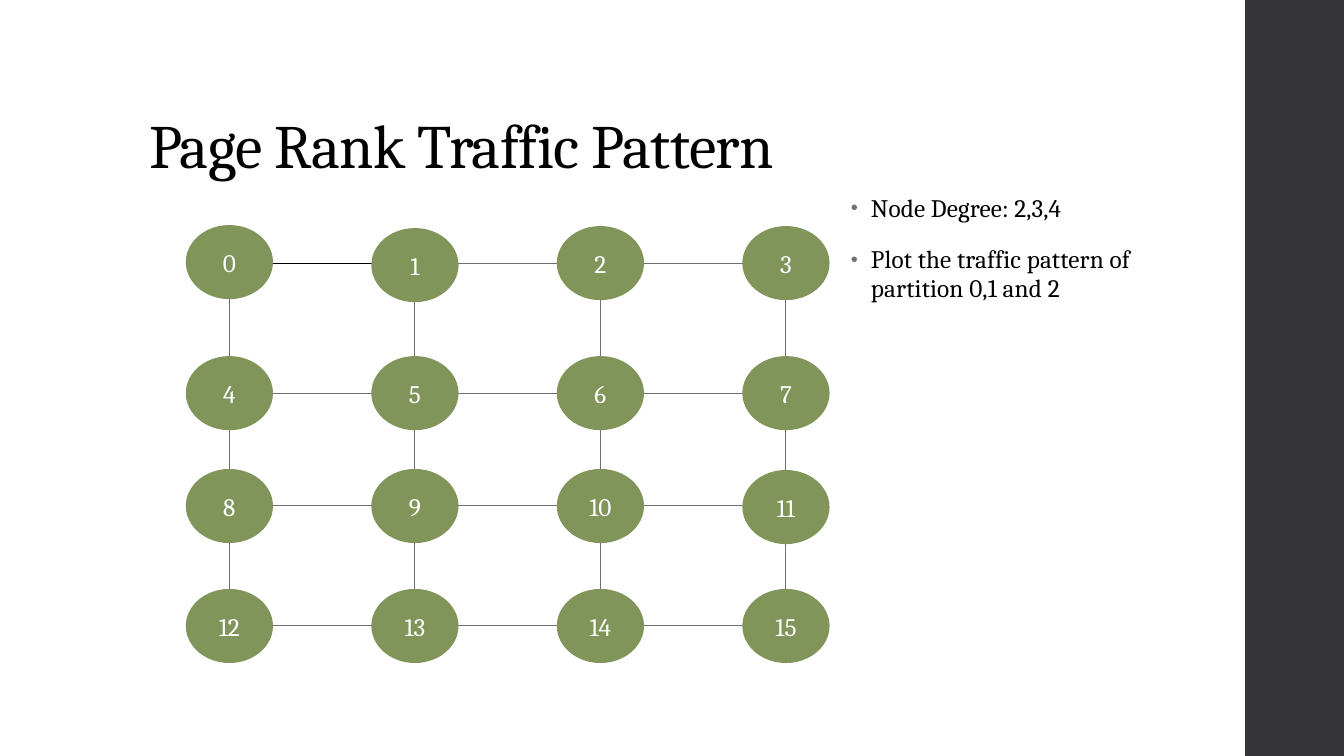
from lxml import etree
from pptx import Presentation
from pptx.dml.color import RGBColor
from pptx.enum.shapes import MSO_CONNECTOR, MSO_SHAPE
from pptx.enum.text import MSO_ANCHOR, PP_ALIGN
from pptx.oxml.ns import qn
from pptx.util import Inches, Pt

FONT = "Cambria"
BLACK, WHITE, GREEN, GRAY, CHARCOAL = "000000", "FFFFFF", "81955B", "6F6F74", "353537"

NODE_WIDTH, NODE_HEIGHT = 0.85, 0.72
COLUMN_LEFTS = [1.85 + 1.84 * column for column in range(4)]
ROW_TOPS = [2.25, 3.54, 4.66, 5.85]
NODE_NUDGES = {0: -0.01, 1: 0.02, 11: 0.01}


def color(hex_code):
    return RGBColor.from_string(hex_code)


def style_runs(paragraph, size, hex_code, tracking=0):
    """Format all runs; tracking is in hundredths of a point."""
    for run in paragraph.runs:
        run.font.name = FONT
        run.font.size = Pt(size)
        run.font.color.rgb = color(hex_code)
        if tracking:
            run.font._element.set("spc", str(tracking))


def add_shape(slide, kind, left, top, width, height, fill):
    shape = slide.shapes.add_shape(
        kind, Inches(left), Inches(top), Inches(width), Inches(height))
    shape.shadow.inherit = False
    shape.fill.solid()
    shape.fill.fore_color.rgb = color(fill)
    shape.line.color.rgb = color(fill)
    shape.line.width = Pt(1.1)
    return shape


def add_side_band(slide):
    band = add_shape(slide, MSO_SHAPE.RECTANGLE, 12.35, 0, 1, 7.5, CHARCOAL)
    band.line.fill.background()


def add_text_frame(slide, left, top, width, height, text):
    frame = slide.shapes.add_textbox(
        Inches(left), Inches(top), Inches(width), Inches(height)).text_frame
    frame.word_wrap = True
    frame.text = text
    return frame


def add_title(slide, text):
    frame = add_text_frame(slide, 1.38, 0.4, 10.6, 1.45, text)
    frame.vertical_anchor = MSO_ANCHOR.BOTTOM
    frame.paragraphs[0].line_spacing = 0.9
    style_runs(frame.paragraphs[0], 44, BLACK, -50)


def add_bullet(paragraph):
    properties = paragraph._p.get_or_add_pPr()
    properties.set("marL", str(Inches(0.2)))
    properties.set("indent", str(Inches(-0.2)))
    bullet_color = etree.SubElement(properties, qn("a:buClr"))
    etree.SubElement(bullet_color, qn("a:srgbClr"), val=GRAY)
    etree.SubElement(properties, qn("a:buSzPct"), val="80000")
    etree.SubElement(properties, qn("a:buFont"), typeface="Arial")
    etree.SubElement(properties, qn("a:buChar"), char="•")


def add_notes_list(slide, items):
    frame = add_text_frame(slide, 8.34, 1.88, 3.52, 4.76, "\n".join(items))
    for paragraph in frame.paragraphs:
        paragraph.line_spacing = 0.95
        paragraph.space_before = Pt(14)
        paragraph.space_after = Pt(2)
        add_bullet(paragraph)
        style_runs(paragraph, 18, BLACK, 10)


def add_node(slide, number):
    row, column = divmod(number, len(COLUMN_LEFTS))
    top = ROW_TOPS[row] + NODE_NUDGES.get(number, 0)
    node = add_shape(slide, MSO_SHAPE.OVAL, COLUMN_LEFTS[column], top,
                     NODE_WIDTH, NODE_HEIGHT, GREEN)
    frame = node.text_frame
    frame.text = str(number)
    frame.vertical_anchor = MSO_ANCHOR.MIDDLE
    frame.paragraphs[0].alignment = PP_ALIGN.CENTER
    style_runs(frame.paragraphs[0], 18, WHITE)


def add_edge(slide, x1, y1, x2, y2, hex_code=GRAY):
    edge = slide.shapes.add_connector(
        MSO_CONNECTOR.STRAIGHT, Inches(x1), Inches(y1), Inches(x2), Inches(y2))
    edge.line.color.rgb = color(hex_code)
    edge.line.width = Pt(0.75)
    etree.SubElement(edge._element.spPr, qn("a:effectLst"))


def add_mesh(slide):
    """Link each node to its right and lower neighbour, then lay the nodes on top."""
    for row, top in enumerate(ROW_TOPS):
        middle = top + NODE_HEIGHT / 2
        for column, (left, right) in enumerate(zip(COLUMN_LEFTS, COLUMN_LEFTS[1:])):
            hex_code = BLACK if row == column == 0 else GRAY
            add_edge(slide, left + NODE_WIDTH, middle, right, middle, hex_code)
    for left in COLUMN_LEFTS:
        center = left + NODE_WIDTH / 2
        for upper, lower in zip(ROW_TOPS, ROW_TOPS[1:]):
            add_edge(slide, center, upper + NODE_HEIGHT, center, lower)
    for number in range(len(ROW_TOPS) * len(COLUMN_LEFTS)):
        add_node(slide, number)


def main():
    deck = Presentation()
    deck.slide_width, deck.slide_height = Inches(13.33), Inches(7.5)
    slide = deck.slides.add_slide(deck.slide_layouts[6])
    add_side_band(slide)
    add_title(slide, "Page Rank Traffic Pattern")
    add_mesh(slide)
    add_notes_list(slide, ["Node Degree: 2,3,4",
                           "Plot the traffic pattern of partition 0,1 and 2"])
    deck.save("out.pptx")


if __name__ == "__main__":
    main()
